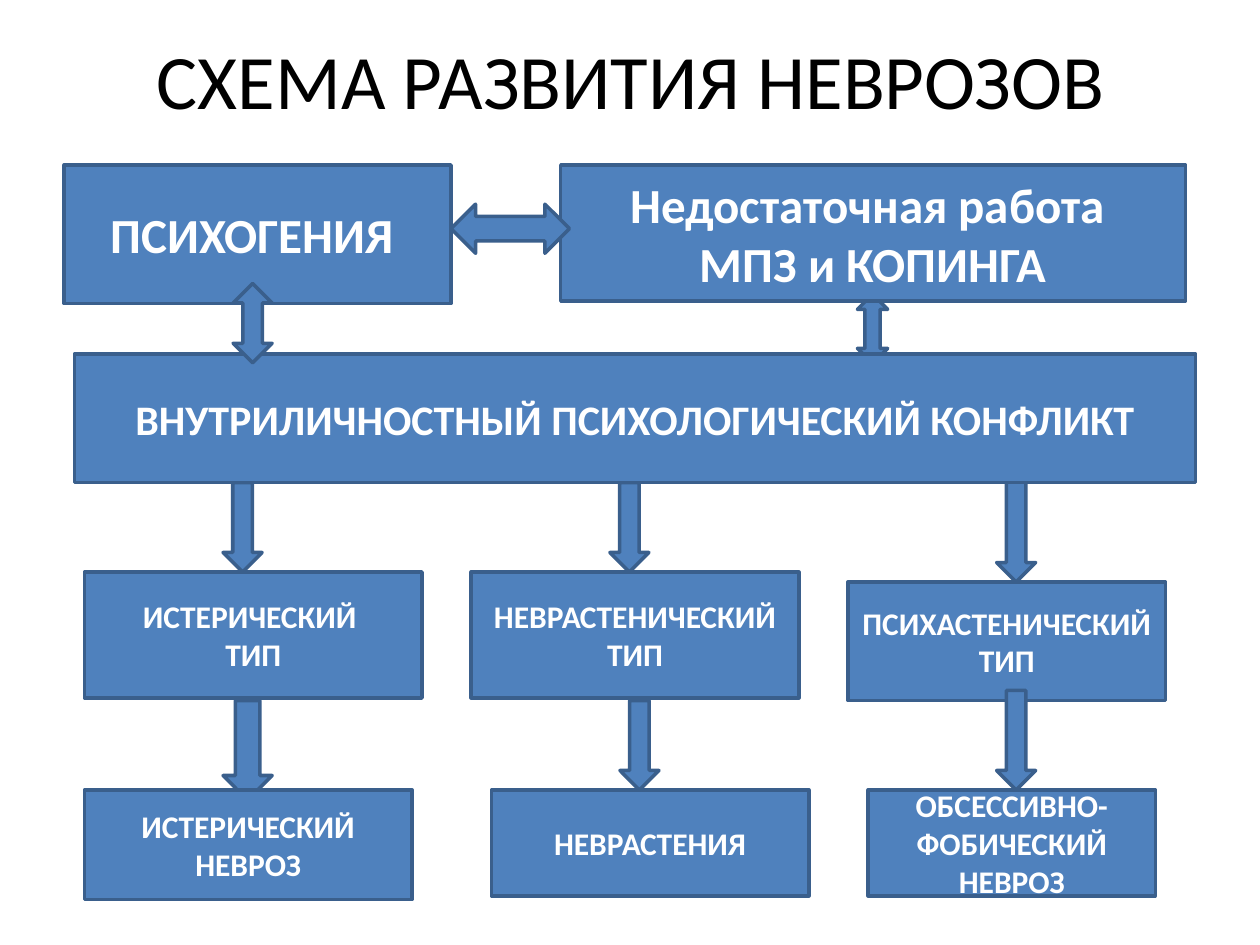
"""Build a one-slide flow diagram of how neuroses develop."""
import pptx
import pptx.dml.color
import pptx.enum.shapes
import pptx.enum.text
import pptx.util

COLORS = {"fill": "4F81BD", "line": "3A5F8C", "light": "FFFFFF", "dark": "000000"}
SHAPES = pptx.enum.shapes.MSO_SHAPE

presentation = pptx.Presentation()
presentation.slide_width = pptx.util.Inches(10)
presentation.slide_height = pptx.util.Inches(7.5)
column = presentation.slide_width / 100
row = presentation.slide_height / 75
slide = presentation.slides.add_slide(presentation.slide_layouts[6])


def add_block(kind, left, top, width, height, rotation=0):
    shape = slide.shapes.add_shape(
        kind, round(left * column), round(top * row), round(width * column), round(height * row)
    )
    shape.rotation = rotation
    shape.shadow.inherit = False
    shape.fill.solid()
    shape.fill.fore_color.rgb = pptx.dml.color.RGBColor.from_string(COLORS["fill"])
    shape.line.color.rgb = pptx.dml.color.RGBColor.from_string(COLORS["line"])
    shape.line.width = pptx.util.Pt(2)
    return shape


def write_text(shape, text, size=18, bold=True, color="light"):
    frame = shape.text_frame
    frame.word_wrap = True
    frame.vertical_anchor = pptx.enum.text.MSO_ANCHOR.MIDDLE
    frame.text = text
    for paragraph in frame.paragraphs:
        paragraph.alignment = pptx.enum.text.PP_ALIGN.CENTER
        for run in paragraph.runs:
            run.font.name = "Calibri"
            run.font.size = pptx.util.Pt(size)
            run.font.bold = bold
            run.font.color.rgb = pptx.dml.color.RGBColor.from_string(COLORS[color])


title = slide.shapes.add_textbox(round(5.1 * column), 0, round(90 * column), round(12.5 * row))
write_text(title, "СХЕМА РАЗВИТИЯ НЕВРОЗОВ", size=44, bold=False, color="dark")

write_text(add_block(SHAPES.RECTANGLE, 5.1, 13.1, 30.7, 11), "ПСИХОГЕНИЯ ", size=28)
add_block(SHAPES.LEFT_RIGHT_ARROW, 66.5, 24.9, 5.5, 2.4, rotation=90)
coping = add_block(SHAPES.RECTANGLE, 44.5, 13.1, 49.6, 10.8)
write_text(coping, "Недостаточная работа \vМПЗ и КОПИНГА", size=28)

personality_types = [
    ("ИСТЕРИЧЕСКИЙ \nТИП", (6.7, 45.4, 26.8, 10), (17.7, 38.3, 3.1, 7.1)),
    ("НЕВРАСТЕНИЧЕСКИЙ ТИП", (37.4, 45.4, 26, 10), (48.4, 38.3, 3.1, 7.1)),
    ("ПСИХАСТЕНИЧЕСКИЙ ТИП", (67.3, 46.2, 25.2, 9.4), (79.1, 37.5, 3.1, 8.7)),
]
neuroses = [
    ("ИСТЕРИЧЕСКИЙ НЕВРОЗ", (6.7, 62.7, 26, 8.7), (17.7, 55.6, 3.9, 7.9)),
    ("НЕВРАСТЕНИЯ", (39, 62.7, 25.2, 8.4), (49.2, 55.6, 3.1, 7.1)),
    ("ОБСЕССИВНО-ФОБИЧЕСКИЙ НЕВРОЗ", (68.9, 62.7, 22.8, 8.4), (79.1, 54.8, 3.1, 7.9)),
]
for text, box, arrow in personality_types + neuroses:
    add_block(SHAPES.DOWN_ARROW, *arrow)
    write_text(add_block(SHAPES.RECTANGLE, *box), text)

conflict = add_block(SHAPES.RECTANGLE, 5.9, 28.1, 89, 10.2)
write_text(conflict, "ВНУТРИЛИЧНОСТНЫЙ ПСИХОЛОГИЧЕСКИЙ КОНФЛИКТ", size=24)
add_block(SHAPES.UP_DOWN_ARROW, 18.5, 22.5, 3.1, 6.3)
add_block(SHAPES.LEFT_RIGHT_ARROW, 35.8, 16.2, 9.4, 3.9)

presentation.save("out.pptx")
